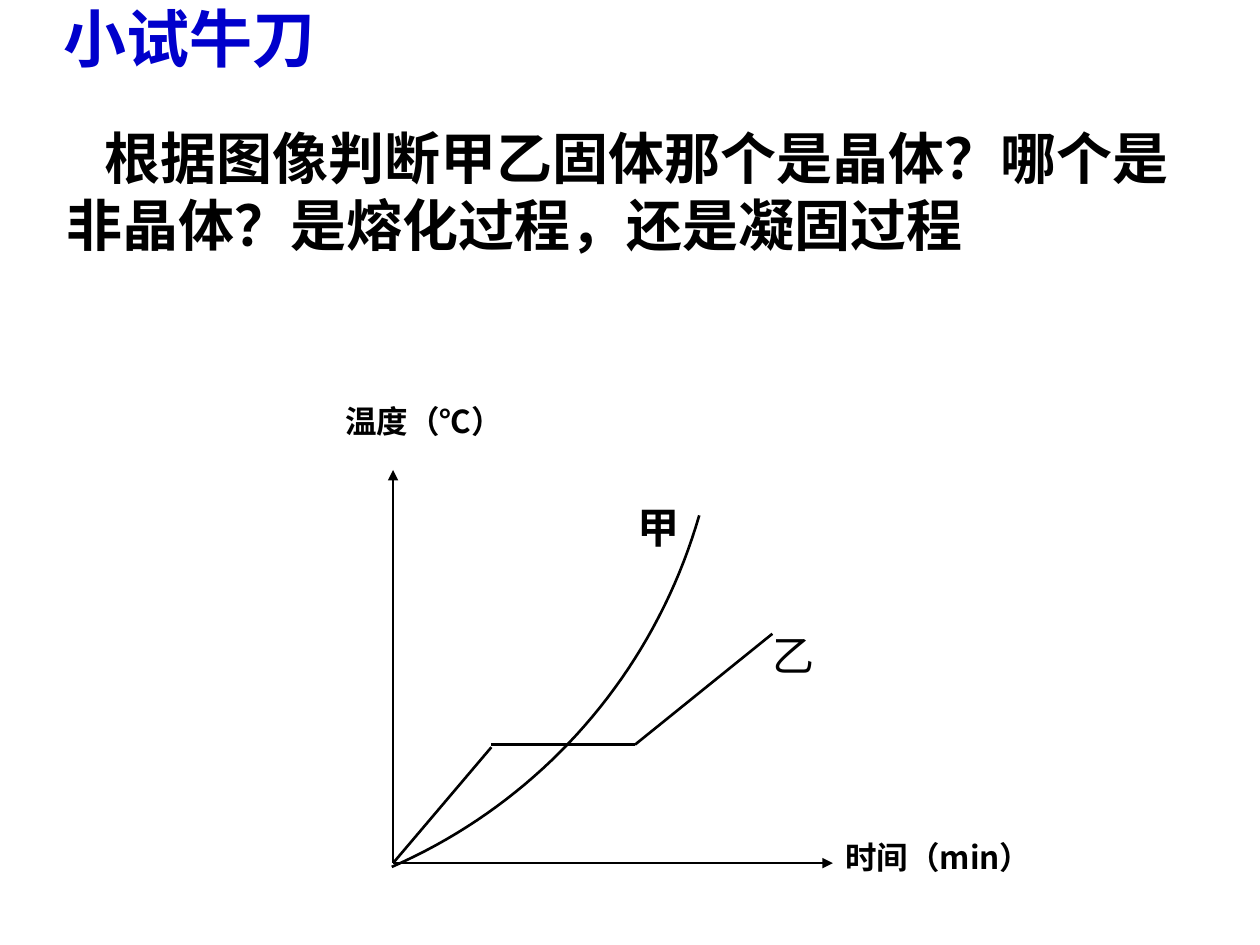
from dataclasses import dataclass

from lxml.etree import SubElement
from pptx import Presentation
from pptx.dml.color import RGBColor
from pptx.enum.shapes import MSO_CONNECTOR as Connector
from pptx.enum.text import MSO_ANCHOR as Anchor
from pptx.oxml.ns import qn
from pptx.util import Inches, Pt

COLORS = {"ink": "000000", "title": "0000CC"}
FONT = "Noto Sans CJK SC"
ORIGIN = (3.12, 6.85)
MELTING_START = (3.9, 5.91)
MELTING_END = (5.04, 5.91)
CURVE_CONTROLS = ((3.11, 6.88), (4.3, 6.36), (5.19, 5.34), (5.55, 4.09))
CURVE_STEPS = 40

Point = tuple[float, float]


@dataclass(frozen=True)
class Label:
    text: str
    left: float
    top: float
    width: float
    height: float
    size: int
    color: str = "ink"
    bold: bool = True
    anchor: Anchor = Anchor.TOP
    indent: float = 0
    space_before: float = 0
    line_spacing: float = 1


@dataclass(frozen=True)
class Line:
    start: Point
    end: Point
    width: float = 1.5
    arrow: bool = False


LABELS = (
    Label("甲", 4.96, 3.93, 0.49, 0.65, 24, space_before=12),
    Label("乙", 6.03, 4.95, 0.48, 0.65, 24, bold=False, space_before=12),
    Label("温度（℃）", 2.64, 3.08, 1.8, 0.52, 18, anchor=Anchor.MIDDLE),
    Label("时间（min）", 6.61, 6.54, 2.09, 0.52, 18, anchor=Anchor.MIDDLE),
    Label("根据图像判断甲乙固体那个是晶体？哪个是非晶体？是熔化过程，还是凝固过程",
          0.43, 0.92, 9.06, 1.18, 32, anchor=Anchor.MIDDLE, indent=0.3),
    Label("小试牛刀", 0.41, -0.05, 3.64, 0.7, 36, color="title"),
)

LINES = (
    Line(ORIGIN, (6.61, 6.85), 0.75, True),
    Line(ORIGIN, (3.12, 3.73), 0.75, True),
    Line(ORIGIN, (3.9, 5.93)),
    Line(MELTING_START, MELTING_END),
    Line(MELTING_END, (6.13, 5.03)),
)


def color_of(name: str) -> RGBColor:
    return RGBColor.from_string(COLORS[name])


def add_label(slide, label: Label) -> None:
    shape = slide.shapes.add_textbox(
        Inches(label.left), Inches(label.top), Inches(label.width), Inches(label.height))
    text_frame = shape.text_frame
    text_frame.word_wrap = True
    text_frame.vertical_anchor = label.anchor
    text_frame.text = label.text
    paragraph = text_frame.paragraphs[0]
    paragraph.space_before = Pt(label.space_before)
    paragraph.line_spacing = label.line_spacing
    if label.indent:
        properties = paragraph._p.get_or_add_pPr()
        properties.set("marL", "0")
        properties.set("indent", str(Inches(label.indent)))
    font = paragraph.runs[0].font
    font.name = FONT
    font.size = Pt(label.size)
    font.bold = label.bold
    font.color.rgb = color_of(label.color)
    SubElement(font._element, qn("a:ea")).set("typeface", FONT)


def add_line(slide, line: Line) -> None:
    connector = slide.shapes.add_connector(
        Connector.STRAIGHT, *map(Inches, line.start + line.end))
    connector.line.color.rgb = color_of("ink")
    connector.line.width = Pt(line.width)
    if line.arrow:
        SubElement(connector.line._get_or_add_ln(), qn("a:tailEnd")).set("type", "triangle")
    SubElement(connector._element.spPr, qn("a:effectLst"))


def bezier_point(controls: tuple[Point, ...], t: float) -> Point:
    weights = ((1 - t) ** 3, 3 * t * (1 - t) ** 2, 3 * t ** 2 * (1 - t), t ** 3)
    x, y = (sum(w * value for w, value in zip(weights, axis)) for axis in zip(*controls))
    return Inches(x), Inches(y)


def add_curve(slide, controls: tuple[Point, ...]) -> None:
    points = [bezier_point(controls, step / CURVE_STEPS) for step in range(CURVE_STEPS + 1)]
    builder = slide.shapes.build_freeform(*points[0])
    builder.add_line_segments(points[1:], close=False)
    shape = builder.convert_to_shape()
    shape.shadow.inherit = False
    shape.fill.background()
    shape.line.color.rgb = color_of("ink")
    shape.line.width = Pt(1.5)


def main() -> None:
    presentation = Presentation()
    presentation.slide_width = Inches(10)
    presentation.slide_height = Inches(7.5)
    slide = presentation.slides.add_slide(presentation.slide_layouts[6])
    for line in LINES:
        add_line(slide, line)
    add_curve(slide, CURVE_CONTROLS)
    for label in LABELS:
        add_label(slide, label)
    presentation.save("out.pptx")


if __name__ == "__main__":
    main()
